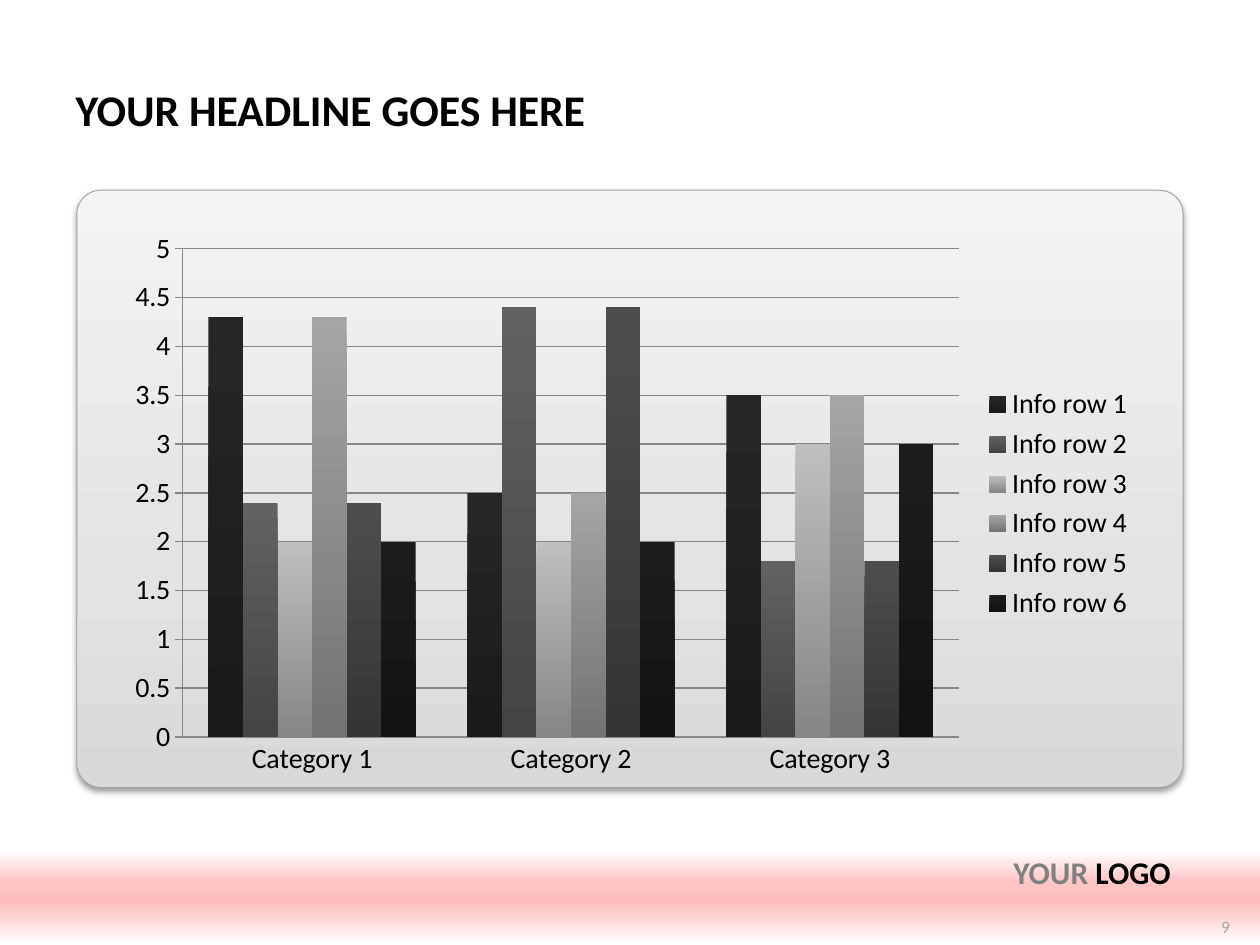
from lxml import etree
from pptx import Presentation
from pptx.chart.data import CategoryChartData
from pptx.dml.color import RGBColor as RGB
from pptx.enum.chart import XL_CHART_TYPE as CHART, XL_LEGEND_POSITION as LEGEND, XL_TICK_MARK as TICK
from pptx.enum.shapes import MSO_SHAPE as SHAPE
from pptx.enum.text import MSO_ANCHOR as ANCHOR, PP_ALIGN as ALIGN
from pptx.oxml.ns import qn
from pptx.util import Inches, Pt

FONT = "Calibri"
COLORS = {"text": "000000", "muted": "808080", "number": "A6A6A6",
          "border": "A1A1A1", "grid": "878787"}
PANEL_STOPS = [(0, "F4F4F4"), (65, "E3E3E3"), (100, "D8D8D8")]
BAND_STOPS = [(0, "FFFFFF"), (33, "FFC5C5"), (55, "FFBEBE"), (100, "FFFFFF")]
SERIES = [
    ("Info row 1", (4.3, 2.5, 3.5), "262626", "1A1A1A"),
    ("Info row 2", (2.4, 4.4, 1.8), "626262", "444444"),
    ("Info row 3", (2, 2, 3), "BFBFBF", "868686"),
    ("Info row 4", (4.3, 2.5, 3.5), "A5A5A5", "737373"),
    ("Info row 5", (2.4, 4.4, 1.8), "4D4D4D", "353535"),
    ("Info row 6", (2, 2, 3), "1C1C1C", "131313"),
]

prs = Presentation()
prs.slide_width, prs.slide_height = Inches(10), Inches(7.5)
W, H = prs.slide_width, prs.slide_height

# left, top, width, height as percentages of the slide
SHARES = {
    "panel": (6.1, 20.13, 87.8, 63.2),
    "band": (0, 90, 100, 10),
    "title": (5, 7.87, 90, 7.33),
    "chart": (9.1, 23.33, 81.9, 60),
    "number": (93.9, 96, 4.7, 4),
    "logo": (5, 89.6, 88.9, 7.33),
}
BOX = {name: [int(v * side / 100) for v, side in zip(share, (W, H, W, H))]
       for name, share in SHARES.items()}


def set_gradient(fill, element, stops):
    """Fill from top to bottom with (percent, colour) stops."""
    fill.gradient()
    fill.gradient_angle = 270
    gs_lst = next(element.iter(qn("a:gsLst")))
    for gs in list(gs_lst):
        gs_lst.remove(gs)
    for pos, color in stops:
        gs = etree.SubElement(gs_lst, qn("a:gs"), pos=str(pos * 1000))
        etree.SubElement(gs, qn("a:srgbClr"), val=color)


def write(sp, *runs, size, bold=False, align=ALIGN.LEFT, anchor=ANCHOR.MIDDLE):
    """Write (text, colour name) runs as one paragraph."""
    tf = sp.text_frame
    tf.word_wrap = True
    tf.vertical_anchor = anchor
    p = tf.paragraphs[0]
    p.alignment = align
    for text, color in runs:
        r = p.add_run()
        r.text = text
        r.font.name, r.font.size, r.font.bold = FONT, Pt(size), bold
        r.font.color.rgb = RGB.from_string(COLORS[color])


slide = prs.slides.add_slide(prs.slide_layouts[5])
shapes = slide.shapes

# Panel and footer band
panel = shapes.add_shape(SHAPE.ROUNDED_RECTANGLE, *BOX["panel"])
panel.adjustments[0] = 0.04
set_gradient(panel.fill, panel._element, PANEL_STOPS)
panel.line.color.rgb = RGB.from_string(COLORS["border"])
panel.line.width = Pt(0.5)
panel.shadow.inherit = False
effects = panel._element.spPr.find(qn("a:effectLst"))
shadow = etree.SubElement(effects, qn("a:outerShdw"), blurRad=str(Pt(3.5)),
                          dist=str(Pt(2)), dir="5400000", rotWithShape="0")
black = etree.SubElement(shadow, qn("a:srgbClr"), val="000000")
etree.SubElement(black, qn("a:alpha"), val="38000")

band = shapes.add_shape(SHAPE.RECTANGLE, *BOX["band"])
set_gradient(band.fill, band._element, BAND_STOPS)
band.line.fill.background()
band.shadow.inherit = False

# Title
title = shapes.title
title.left, title.top, title.width, title.height = BOX["title"]
write(title, ("YOUR HEADLINE GOES HERE", "text"), size=25, bold=True)

# Chart
data = CategoryChartData()
data.categories = ["Category 1", "Category 2", "Category 3"]
for name, values, *_ in SERIES:
    data.add_series(name, values)
chart = shapes.add_chart(CHART.COLUMN_CLUSTERED, *BOX["chart"], data).chart
chart.has_title = False
chart.font.name, chart.font.size = FONT, Pt(18)
chart.font.color.rgb = RGB.from_string(COLORS["text"])

plot = chart.plots[0]
plot.gap_width, plot.overlap = 150, 0
plot.vary_by_categories = False
for ser, (_, _, top, bottom) in zip(plot.series, SERIES):
    set_gradient(ser.format.fill, ser._element, [(0, top), (100, bottom)])

cat_axis, val_axis = chart.category_axis, chart.value_axis
for axis in (cat_axis, val_axis):
    axis.tick_labels.font.size = Pt(16)
cat_axis.major_tick_mark = TICK.NONE
cat_axis.format.line.fill.background()
val_axis.major_tick_mark = TICK.OUTSIDE
val_axis.minimum_scale, val_axis.maximum_scale, val_axis.major_unit = 0, 5, 0.5
val_axis.has_major_gridlines = True
for line in (val_axis.format.line, val_axis.major_gridlines.format.line):
    line.color.rgb = RGB.from_string(COLORS["grid"])
    line.width = Pt(0.75)

chart.has_legend = True
chart.legend.position = LEGEND.RIGHT
chart.legend.include_in_layout = False
chart.legend.font.size = Pt(16)

# Footer
write(shapes.add_textbox(*BOX["number"]), ("9", "number"),
      size=10, align=ALIGN.RIGHT)
write(shapes.add_textbox(*BOX["logo"]), ("YOUR ", "muted"), ("LOGO", "text"),
      size=18, bold=True, align=ALIGN.RIGHT, anchor=ANCHOR.TOP)

prs.save("out.pptx")
